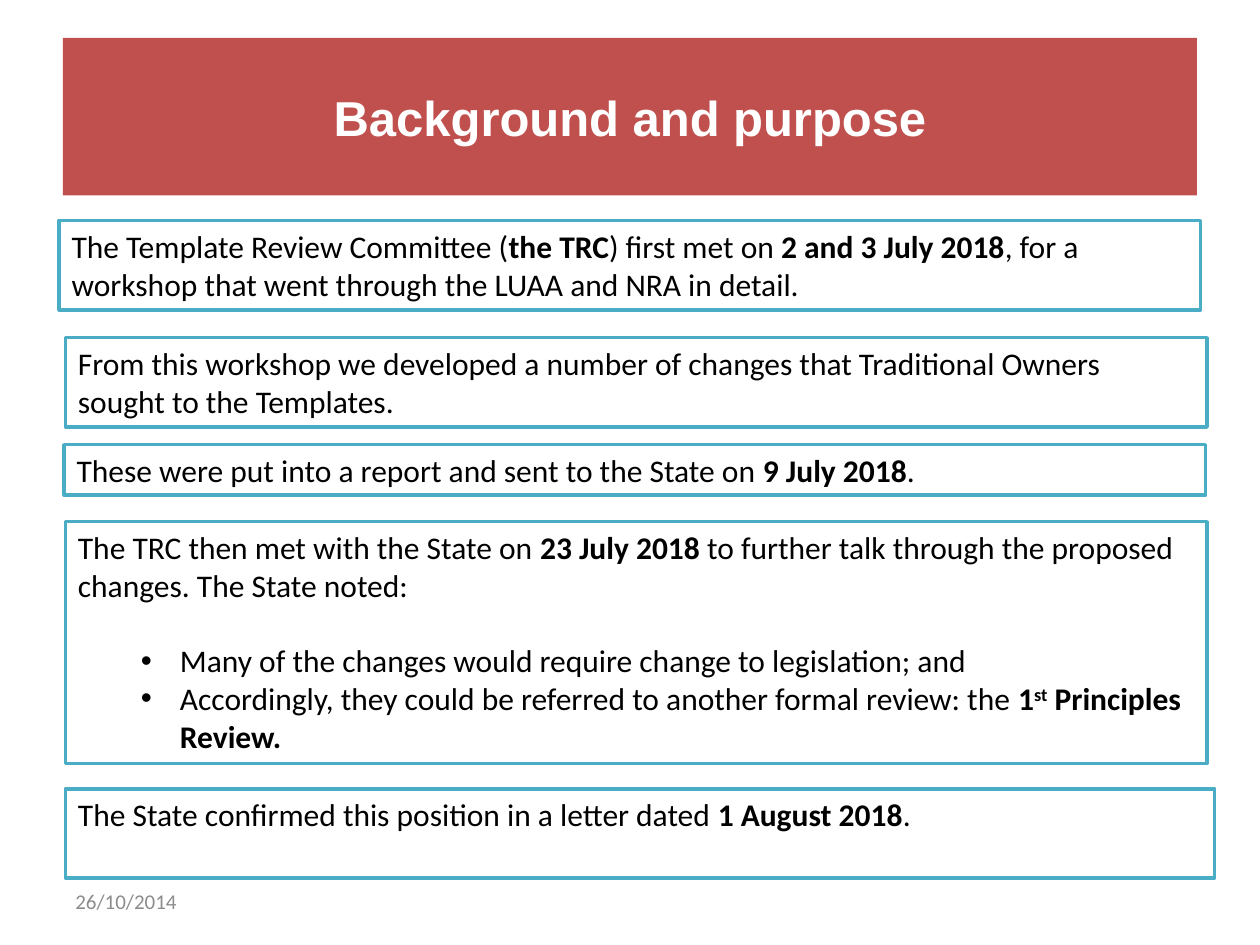
import pptx
import pptx.util
import pptx.dml.color
import pptx.enum.shapes
import pptx.enum.text
import pptx.oxml
import pptx.oxml.ns
from pptx.util import Inches

COLORS = {"banner": "C0504D", "white": "FFFFFF", "border": "4BACC6",
          "body": "000000", "date": "8C8C8C"}

# Content: a run is (text, style), a paragraph is (kind, runs)
TITLE = "Background and purpose"
DATE = "26/10/2014"
STATEMENTS = [
    ((0.47, 1.75, 9.06, 0.71), [
        ("plain", [("The Template Review Committee (", ""), ("the TRC", "bold"),
                   (") first met on ", ""), ("2 and 3 July 2018", "bold"),
                   (", for a workshop that went through the LUAA and NRA in detail.", "")])]),
    ((0.52, 2.68, 9.06, 0.71), [
        ("plain", [("From this workshop we developed a number of changes that "
                    "Traditional Owners sought to the Templates.", "")])]),
    ((0.51, 3.53, 9.06, 0.4), [
        ("plain", [("These were put into a report and sent to the State on ", ""),
                   ("9 July 2018", "bold"), (".", "")])]),
    ((0.52, 4.14, 9.06, 1.92), [
        ("lead", [("The TRC then met with the State on ", ""), ("23 July 2018 ", "bold"),
                  ("to further talk through the proposed changes. The State noted:", "")]),
        ("bullet", [("Many of the changes would require change to legislation; and", "")]),
        ("bullet", [("Accordingly, they could be referred to another formal review: the ", ""),
                    ("1", "bold"), ("st", "super"), (" Principles Review.", "bold")])]),
    ((0.52, 6.26, 9.12, 0.71), [
        ("plain", [("The State confirmed this position in a letter dated ", ""),
                   ("1 August 2018", "bold"), (".", "")])]),
]

LEFT = pptx.enum.text.PP_ALIGN.LEFT
CENTER = pptx.enum.text.PP_ALIGN.CENTER
TOP = pptx.enum.text.MSO_ANCHOR.TOP
MIDDLE = pptx.enum.text.MSO_ANCHOR.MIDDLE
TITLE_FONT = {"name": "Arial", "size": pptx.util.Pt(28), "bold": True}
BODY_FONT = {"name": "Calibri", "size": pptx.util.Pt(18), "bold": False}
DATE_FONT = {"name": "Calibri", "size": pptx.util.Pt(12), "bold": False}


def rgb(key):
    return pptx.dml.color.RGBColor.from_string(COLORS[key])


def add_box(slide, place, fill=None, border=None, anchor=TOP):
    box = slide.shapes.add_shape(pptx.enum.shapes.MSO_SHAPE.RECTANGLE, *map(Inches, place))
    box.shadow.inherit = False
    if fill:
        box.fill.solid()
        box.fill.fore_color.rgb = rgb(fill)
    else:
        box.fill.background()
    if border:
        box.line.color.rgb = rgb(border)
        box.line.width = pptx.util.Pt(2)
    else:
        box.line.fill.background()
    box.text_frame.word_wrap = True
    box.text_frame.vertical_anchor = anchor
    return box.text_frame


def add_run(paragraph, text, font, color, style=""):
    run = paragraph.add_run()
    run.text = text
    for attribute, value in font.items():
        setattr(run.font, attribute, value)
    run.font.color.rgb = rgb(color)
    if style:
        run.font.bold = True
    if style == "super":
        run._r.get_or_add_rPr().set("baseline", "30000")


def make_bullet(paragraph):
    properties = paragraph._p.get_or_add_pPr()
    properties.set("marL", str(Inches(0.81)))
    properties.set("indent", str(Inches(-0.31)))
    namespace = pptx.oxml.ns.nsdecls("a")
    for xml in (f'<a:buFont {namespace} typeface="Arial"/>',
                f'<a:buChar {namespace} char="•"/>'):
        properties.append(pptx.oxml.parse_xml(xml))


presentation = pptx.Presentation()
presentation.slide_width, presentation.slide_height = Inches(10), Inches(7.5)
slide = presentation.slides.add_slide(presentation.slide_layouts[6])

# Title banner and date
for text, place, fill, align, font, color in (
        (TITLE, (0.5, 0.3, 9, 1.25), "banner", CENTER, TITLE_FONT, "white"),
        (DATE, (0.5, 6.95, 2.33, 0.4), None, LEFT, DATE_FONT, "date")):
    line = add_box(slide, place, fill, anchor=MIDDLE).paragraphs[0]
    line.alignment = align
    add_run(line, text, font, color)

# Bordered statements
for place, paragraphs in STATEMENTS:
    frame = add_box(slide, place, "white", "border")
    for index, (kind, runs) in enumerate(paragraphs):
        paragraph = frame.add_paragraph() if index else frame.paragraphs[0]
        paragraph.alignment = LEFT
        if kind == "lead":
            paragraph.space_after = pptx.util.Pt(21.6)
        elif kind == "bullet":
            make_bullet(paragraph)
        for text, style in runs:
            add_run(paragraph, text, BODY_FONT, "body", style)

presentation.save("out.pptx")
